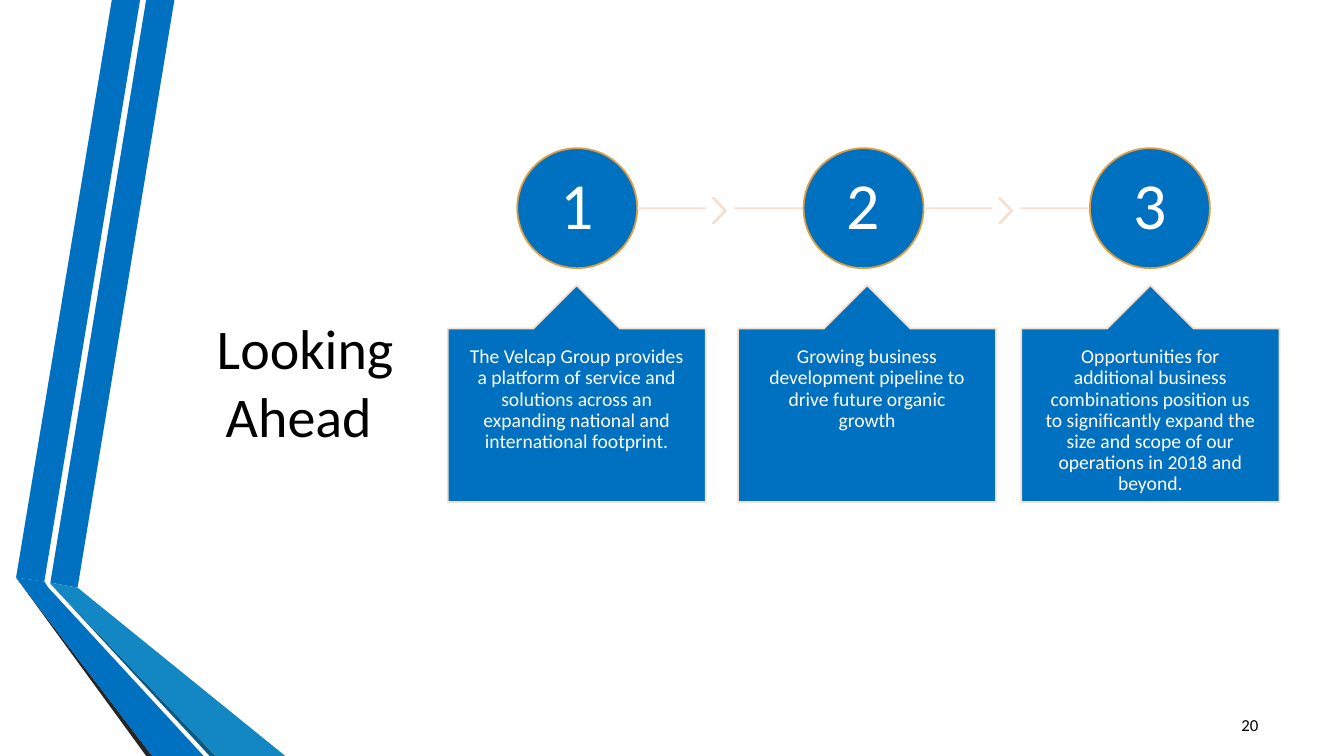
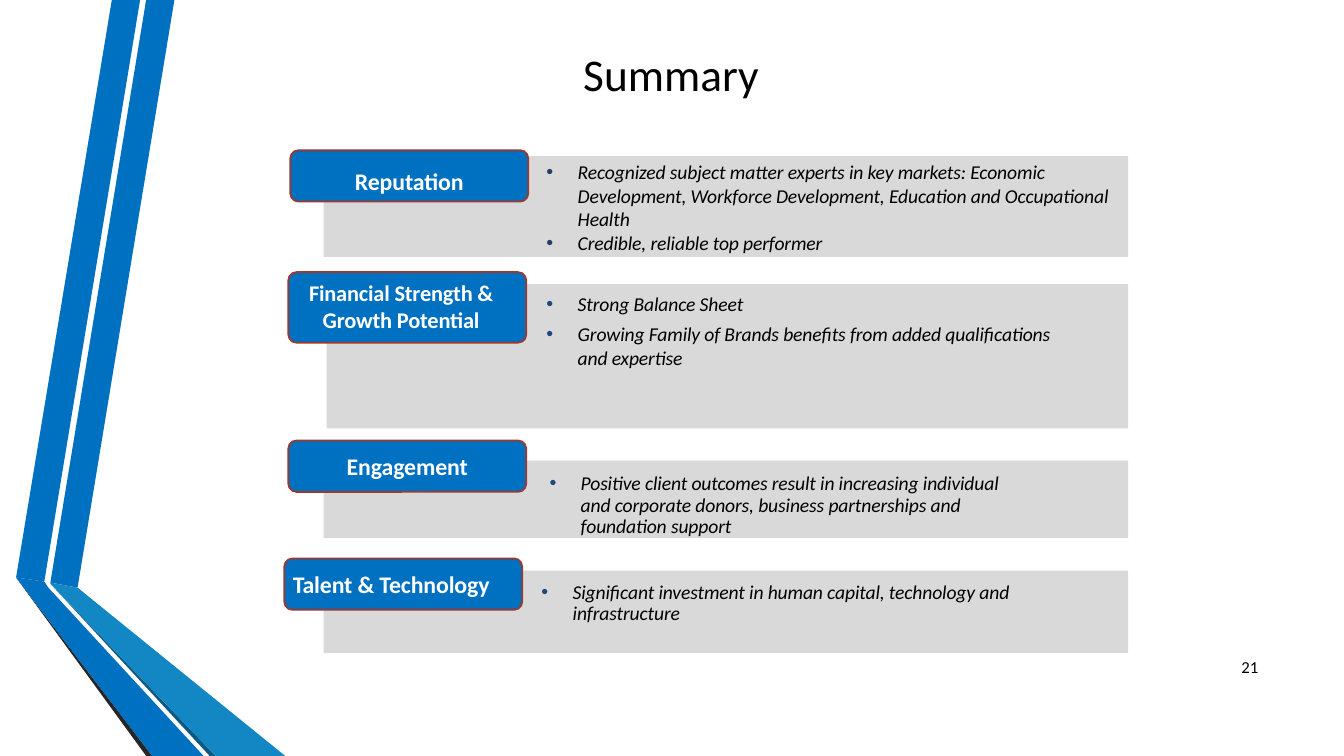
from dataclasses import dataclass

from lxml.etree import SubElement
from pptx import Presentation
from pptx.dml.color import RGBColor
from pptx.enum.shapes import MSO_CONNECTOR, MSO_SHAPE
from pptx.enum.text import MSO_ANCHOR, MSO_AUTO_SIZE, PP_ALIGN
from pptx.oxml.ns import qn
from pptx.util import Inches, Pt

FONT = "Calibri"
BLUE, WHITE, BLACK = "0070C0", "FFFFFF", "000000"
GREY, PEACH, GOLD, RUST = "D9D9D9", "F4DFCE", "E29D3E", "9E372C"
NAVY, DARK_NAVY = "1F497D", "254061"

RIBBONS = [
    (BLUE, [(0.5, 5.78), (0.77, 5.83), (1.73, 0), (1.45, 0)]),
    (BLUE, [(1.39, 0), (1.11, 0), (0.16, 5.73), (0.44, 5.77)]),
    ("262626", [(0.16, 5.73), (1.45, 7.5), (1.51, 7.5)]),
    ("0C5A82", [(0.5, 5.79), (2.08, 7.5), (2.14, 7.5)]),
    ("1287C3", [(0.5, 5.79), (2.14, 7.5), (2.83, 7.5), (0.77, 5.83), (0.5, 5.78)]),
    (BLUE, [(2.02, 7.5), (0.48, 5.83), (0.44, 5.77), (0.16, 5.73), (1.51, 7.5)]),
]

STEPS = [
    (4.44, "The Velcap Group provides a platform of service and solutions across "
           "an expanding national and international footprint."),
    (7.32, "Growing business development pipeline to drive future organic growth"),
    (10.13, "Opportunities for additional business combinations position us to "
            "significantly expand the size and scope of our operations in 2018 "
            "and beyond."),
]


@dataclass
class Topic:
    label: str
    label_box: tuple
    label_insets: tuple  # left, top, right, bottom
    band_box: tuple
    list_box: tuple
    items: list
    indent: float
    label_size: float = 17
    list_top: float = 0
    line_spacing: object = 1.0
    space_before: float = 0
    bullet_color: str = NAVY


TOPICS = [
    Topic("Reputation", (2.88, 1.49, 2.36, 0.51), (0, 0.1, 0, 0),
          (3.21, 1.55, 7.98, 1), (5.35, 1.59, 5.84, 0.96),
          ["Recognized subject matter experts in key markets: Economic Development, "
           "Workforce Development, Education and Occupational Health",
           "Credible, reliable top performer"],
          indent=0.38, bullet_color=DARK_NAVY),
    Topic("Financial Strength & Growth Potential", (2.86, 2.7, 2.36, 0.7),
          (0.1, 0, 0.22, 0.03), (3.24, 2.82, 7.95, 1.43), (5.4, 2.9, 5.21, 1.05),
          ["Strong Balance Sheet",
           "Growing Family of Brands benefits from added qualifications and expertise"],
          indent=0.33, label_size=16, space_before=4.3),
    Topic("Engagement", (2.86, 4.37, 2.36, 0.51), (0, 0, 0, 0),
          (3.21, 4.57, 7.98, 0.77), (5.35, 4.57, 4.75, 0.76),
          ["Positive client outcomes result in increasing individual and corporate "
           "donors, business partnerships and foundation support"],
          indent=0.41, list_top=0.13, line_spacing=Pt(15.1)),
    Topic("Talent & Technology", (2.82, 5.54, 2.36, 0.51), (0, 0, 0.24, 0),
          (3.21, 5.66, 7.98, 0.82), (5.27, 5.68, 5.53, 0.52),
          ["Significant investment in human capital, technology and infrastructure"],
          indent=0.41, list_top=0.1, line_spacing=Pt(15.1)),
]


def rgb(color):
    return RGBColor.from_string(color)


def set_alpha(color_format_parent, percent):
    """Make every solid colour under the element partly transparent."""
    for color in color_format_parent.iter(qn("a:srgbClr")):
        SubElement(color, qn("a:alpha")).set("val", str(percent * 1000))


def paint(shape, fill, line=None):
    shape.shadow.inherit = False
    shape.fill.solid()
    shape.fill.fore_color.rgb = rgb(fill)
    if line:
        shape.line.color.rgb = rgb(line)
        shape.line.width = Pt(1.25)
    else:
        shape.line.fill.background()


def add_box(slide, preset, box, fill, line=None):
    shape = slide.shapes.add_shape(preset, *map(Inches, box))
    paint(shape, fill, line)
    return shape


def set_frame(shape, insets=(0.1, 0.05, 0.1, 0.05), anchor=MSO_ANCHOR.MIDDLE):
    frame = shape.text_frame
    frame.word_wrap = True
    frame.auto_size = MSO_AUTO_SIZE.NONE
    frame.vertical_anchor = anchor
    (frame.margin_left, frame.margin_top,
     frame.margin_right, frame.margin_bottom) = map(Inches, insets)
    return frame


def add_text(paragraph, text, size, color=BLACK, align=PP_ALIGN.CENTER,
             bold=False, italic=False, tight=False):
    paragraph.alignment = align
    run = paragraph.add_run()
    run.text = text
    font = run.font
    font.name, font.size, font.bold, font.italic = FONT, Pt(size), bold, italic
    font.color.rgb = rgb(color)
    if tight:
        run._r.get_or_add_rPr().set("spc", "-10")


def place(shape, box):
    shape.left, shape.top, shape.width, shape.height = map(Inches, box)


def set_title(slide, text, size, box):
    place(slide.shapes.title, box)
    add_text(set_frame(slide.shapes.title).paragraphs[0], text, size)


def add_page_number(slide, number, top):
    page_number = slide.shapes.add_textbox(*map(Inches, (11.98, top, 0.6, 0.4)))
    add_text(set_frame(page_number).paragraphs[0], number, 12, align=PP_ALIGN.RIGHT)


def add_ribbons_to_master(prs, slide):
    """Draw the ribbons on a slide, then move them to the master."""
    for shape_id, (color, points) in enumerate(RIBBONS, start=20):
        start, *rest = [(Inches(x), Inches(y)) for x, y in points]
        outline = slide.shapes.build_freeform(*start)
        outline.add_line_segments(rest)
        ribbon = outline.convert_to_shape()
        paint(ribbon, color)
        ribbon._element.nvSpPr.cNvPr.set("id", str(shape_id))
        prs.slide_master.shapes.element.append(ribbon._element)


def add_rule(slide, left, right, y):
    rule = slide.shapes.add_connector(
        MSO_CONNECTOR.STRAIGHT, *map(Inches, (left, y, right, y)))
    rule.line.color.rgb = rgb(PEACH)
    rule.line.width = Pt(1.25)
    set_alpha(rule._element.spPr, 90)
    SubElement(rule._element.spPr, qn("a:effectLst"))


def add_link(slide, left, right, y):
    """Join two circles with a rule broken by a chevron."""
    add_rule(slide, left, left + 0.68, y)
    chevron = add_box(slide, MSO_SHAPE.CHEVRON, (left + 0.75, y - 0.1, 0.13, 0.25),
                      PEACH, PEACH)
    chevron.adjustments[0] = 0.9
    set_alpha(chevron._element.spPr, 90)
    add_rule(slide, left + 0.96, right, y)


def add_step_circle(slide, number, box):
    circle = add_box(slide, MSO_SHAPE.OVAL, box, BLUE, GOLD)
    paragraph = set_frame(circle, (0.05,) * 4).paragraphs[0]
    paragraph.line_spacing = 0.9
    add_text(paragraph, str(number), 47, WHITE)


def add_step_callout(slide, text, box):
    callout = add_box(slide, MSO_SHAPE.UP_ARROW_CALLOUT, box, BLUE, PEACH)
    for index, value in enumerate((0.5, 0.2, 0.2, 0.8)):
        callout.adjustments[index] = value
    frame = set_frame(callout, (0.2, 0.18, 0.2, 0.18), MSO_ANCHOR.TOP)
    frame.paragraphs[0].line_spacing = 0.9
    add_text(frame.paragraphs[0], text, 14, WHITE)


def add_steps(slide, left, top):
    diameter, pitch = 1.19, 2.84
    for index, (callout_left, text) in enumerate(STEPS):
        x = left + index * pitch
        if index:
            add_link(slide, x - pitch + diameter, x, top + diameter / 2)
        add_step_circle(slide, index + 1, (x, top, diameter, diameter))
        add_step_callout(slide, text, (callout_left, top + 1.36, 2.56, 2.15))


def set_bullet(paragraph, color, indent):
    properties = paragraph._p.get_or_add_pPr()
    properties.set("marL", str(Inches(indent)))
    properties.set("indent", str(-Inches(0.31)))
    bullet_color = SubElement(properties, qn("a:buClr"))
    SubElement(bullet_color, qn("a:srgbClr")).set("val", color)
    SubElement(properties, qn("a:buFont")).set("typeface", "Arial")
    SubElement(properties, qn("a:buChar")).set("char", "•")


def add_topic(slide, topic, body):
    add_box(slide, MSO_SHAPE.RECTANGLE, topic.band_box, GREY)

    label = add_box(slide, MSO_SHAPE.ROUNDED_RECTANGLE, topic.label_box, BLUE, RUST)
    label.adjustments[0] = 0.08 / topic.label_box[3]
    add_text(set_frame(label, topic.label_insets).paragraphs[0], topic.label,
             topic.label_size, WHITE, bold=True, tight=True)

    slide.shapes.element.append(body._element)  # bring the list above its band
    place(body, topic.list_box)
    frame = set_frame(body, (0, topic.list_top, 0, 0), MSO_ANCHOR.TOP)
    for index, item in enumerate(topic.items):
        paragraph = frame.add_paragraph() if index else frame.paragraphs[0]
        paragraph.line_spacing = topic.line_spacing
        paragraph.space_before = Pt(topic.space_before)
        paragraph.space_after = Pt(0)
        set_bullet(paragraph, topic.bullet_color, topic.indent)
        add_text(paragraph, item, 14, align=PP_ALIGN.LEFT, italic=True, tight=True)


def build_looking_ahead(slide):
    set_title(slide, "Looking Ahead ", 40, (1.62, 0.75, 2.81, 6.06))
    add_steps(slide, 5.13, 1.47)
    add_page_number(slide, "20", 6.99)


def build_summary(slide):
    set_title(slide, "Summary", 32.4, (5.18, 0.38, 2.95, 0.69))
    bodies = [p for p in slide.placeholders if p.placeholder_format.idx]
    for topic, body in zip(TOPICS, bodies):
        add_topic(slide, topic, body)
    add_page_number(slide, "21", 6.42)


def main():
    prs = Presentation()
    prs.slide_width, prs.slide_height = Inches(13.33), Inches(7.5)
    title_only = prs.slide_layouts.get_by_name("Title Only")
    four_bodies = prs.slide_layouts.get_by_name("Comparison")
    looking_ahead = prs.slides.add_slide(title_only)
    add_ribbons_to_master(prs, looking_ahead)
    build_looking_ahead(looking_ahead)
    build_summary(prs.slides.add_slide(four_bodies))
    prs.save("out.pptx")


if __name__ == "__main__":
    main()
